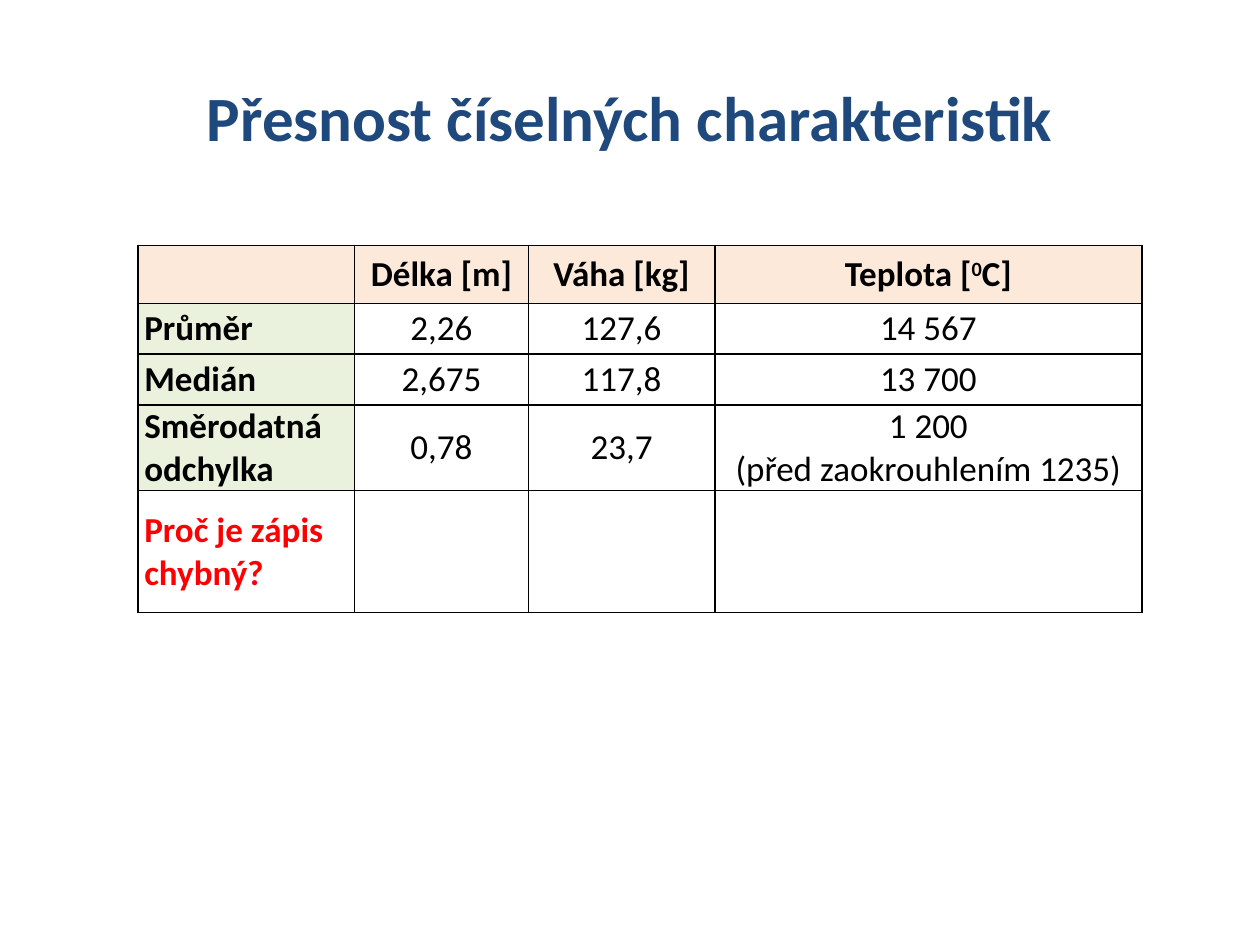
from lxml import etree
from pptx import Presentation
from pptx.dml.color import RGBColor
from pptx.enum import text
from pptx.oxml import ns
from pptx.util import Cm, Pt

# Content: a cell is a list of paragraphs, "^" surrounds superscript
TITLE = "Přesnost číselných charakteristik"
ROWS = [
    ["", "Délka [m]", "Váha [kg]", "Teplota [^0^C]"],
    ["Průměr", "2,26", "127,6", "14 567"],
    ["Medián", "2,675", "117,8", "13 700"],
    ["Směrodatná odchylka", "0,78", "23,7", "1 200\n(před zaokrouhlením 1235)"],
    ["Proč je zápis chybný?", "", "", ""],
]
COLUMN_WIDTHS = [4.37, 3.5, 3.76, 8.61]
ROW_HEIGHTS = [1.17, 1.02, 1.02, 1.73, 2.46]

THEME = {
    "font": "Calibri", "title_size": 36, "cell_size": 20, "border_width": 1,
    "title": "1F497D", "ink": "000000", "question": "FF0000",
    "header_fill": "FDE9D9", "label_fill": "EAF1DD",
}


def style(span, size, color, bold):
    span.font.name = THEME["font"]
    span.font.size = Pt(size)
    span.font.bold = bold
    span.font.color.rgb = RGBColor.from_string(color)


def add_borders(cell):
    properties = cell._tc.get_or_add_tcPr()
    for side in ("lnL", "lnR", "lnT", "lnB"):
        line = etree.SubElement(properties, ns.qn("a:" + side), w=str(Pt(THEME["border_width"])))
        fill = etree.SubElement(line, ns.qn("a:solidFill"))
        etree.SubElement(fill, ns.qn("a:srgbClr"), val=THEME["ink"])


def fill_cell(cell, content, row, column):
    last_row = row == len(ROWS) - 1
    add_borders(cell)
    if row == 0 or (column == 0 and not last_row):
        cell.fill.solid()
        key = "header_fill" if row == 0 else "label_fill"
        cell.fill.fore_color.rgb = RGBColor.from_string(THEME[key])
    else:
        cell.fill.background()
    cell.margin_left = cell.margin_right = Cm(0.13)
    cell.margin_top = cell.margin_bottom = 0
    cell.vertical_anchor = text.MSO_ANCHOR.MIDDLE
    if not content:
        return
    frame = cell.text_frame
    frame.text = content.replace("^", "")
    for para, line in zip(frame.paragraphs, content.split("\n")):
        para.alignment = text.PP_ALIGN.CENTER if column else text.PP_ALIGN.LEFT
        pieces = line.split("^")
        para.text = pieces[0]
        for piece in pieces[1:]:
            para.add_run().text = piece
        for index, span in enumerate(para.runs):
            style(span, THEME["cell_size"], THEME["question" if last_row else "ink"],
                  row == 0 or column == 0)
            if index % 2:
                span._r.get_or_add_rPr().set("baseline", "30000")


deck = Presentation()
deck.slide_width, deck.slide_height = Cm(25.4), Cm(19.05)
page = deck.slides.add_slide(deck.slide_layouts[6])

# Title
box = page.shapes.add_textbox(Cm(1.27), Cm(0.76), Cm(22.86), Cm(3.18))
frame = box.text_frame
frame.word_wrap = True
frame.vertical_anchor = text.MSO_ANCHOR.MIDDLE
frame.text = TITLE
para = frame.paragraphs[0]
para.alignment = text.PP_ALIGN.CENTER
style(para.runs[0], THEME["title_size"], THEME["title"], True)

# Table
table = page.shapes.add_table(
    len(ROWS), len(COLUMN_WIDTHS), Cm(2.78), Cm(4.95),
    Cm(sum(COLUMN_WIDTHS)), Cm(sum(ROW_HEIGHTS))).table
table.first_row = table.horz_banding = False
for column, width in zip(table.columns, COLUMN_WIDTHS):
    column.width = Cm(width)
for row, height in zip(table.rows, ROW_HEIGHTS):
    row.height = Cm(height)
for r, contents in enumerate(ROWS):
    for c, content in enumerate(contents):
        fill_cell(table.cell(r, c), content, r, c)

deck.save("out.pptx")
